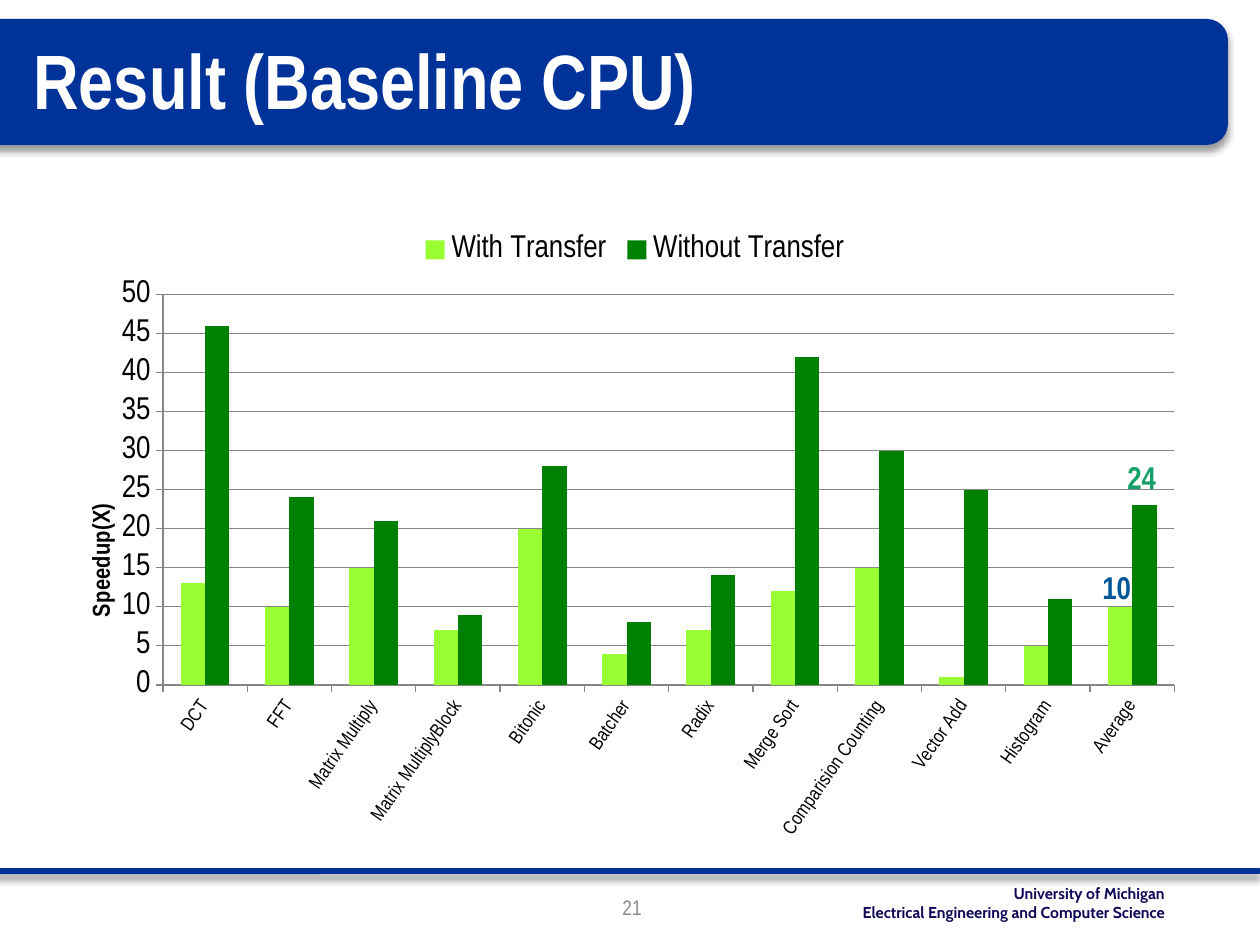
from dataclasses import dataclass

import pptx
import pptx.chart.data
import pptx.dml.color
import pptx.enum.chart
import pptx.enum.shapes
import pptx.enum.text
import pptx.oxml
import pptx.oxml.ns
import pptx.util

PX = 914400 / 126
FONT = "Arial Narrow"
NAVY, GRID = "003399", "868686"
ALIGN = pptx.enum.text.PP_ALIGN
ANCHOR = pptx.enum.text.MSO_ANCHOR

SPEEDUPS = [
    ("DCT", 13, 46), ("FFT", 10, 24), ("Matrix Multiply", 15, 21),
    ("Matrix MultiplyBlock", 7, 9), ("Bitonic", 20, 28), ("Batcher", 4, 8),
    ("Radix", 7, 14), ("Merge Sort", 12, 42), ("Comparision Counting", 15, 30),
    ("Vector Add", 1, 25), ("Histogram", 5, 11), ("Average", 10, 23),
]
SERIES = [("With Transfer", "99FF33"), ("Without Transfer", "008000")]


@dataclass
class Box:
    x: int
    y: int
    w: int
    h: int

    def emu(self) -> list[int]:
        return [round(v * PX) for v in (self.x, self.y, self.w, self.h)]


@dataclass
class Label:
    box: Box
    lines: list[str]
    size: int
    color: str
    bold: bool = True
    font: str = FONT
    align: ALIGN = ALIGN.LEFT
    anchor: ANCHOR = ANCHOR.TOP
    wrap: bool = True


BARS = [Box(-32, 19, 1260, 126), Box(-21, 868, 1281, 6)]
LABELS = [
    Label(Box(809, 878, 368, 50),
          ["University of Michigan", "Electrical Engineering and Computer Science"],
          9, "0F0958", font="Cabin", align=ALIGN.RIGHT),
    Label(Box(485, 882, 294, 50), ["21"], 12, "8C8C8C", bold=False,
          align=ALIGN.CENTER, anchor=ANCHOR.MIDDLE),
    Label(Box(21, 0, 1134, 158), ["Result (Baseline CPU)"], 44, "FFFFFF",
          anchor=ANCHOR.MIDDLE),
]
AVERAGES = [
    Label(Box(1090, 562, 54, 50), ["10"], 18, "005696", wrap=False),
    Label(Box(1115, 452, 54, 50), ["24"], 18, "14A067", wrap=False),
]


def rgb(color: str) -> pptx.dml.color.RGBColor:
    return pptx.dml.color.RGBColor.from_string(color)


def set_font(font, size: int, color: str, bold: bool = False, name: str = FONT) -> None:
    font.name, font.size, font.bold = name, pptx.util.Pt(size), bold
    font.color.rgb = rgb(color)


def add_bar(slide, box: Box) -> None:
    """Add a rounded navy bar with a soft shadow below it."""
    s = slide.shapes.add_shape(
        pptx.enum.shapes.MSO_SHAPE.ROUNDED_RECTANGLE, *box.emu())
    s.fill.solid()
    s.fill.fore_color.rgb = rgb(NAVY)
    s.line.fill.background()
    s.shadow.inherit = False
    effects = s._element.spPr.find(pptx.oxml.ns.qn("a:effectLst"))
    effects.append(pptx.oxml.parse_xml(
        f'<a:outerShdw {pptx.oxml.ns.nsdecls("a")} blurRad="50800" dist="38100" '
        'dir="5400000" algn="t" rotWithShape="0"><a:srgbClr val="000000">'
        '<a:alpha val="40000"/></a:srgbClr></a:outerShdw>'))


def add_label(slide, label: Label) -> None:
    tf = slide.shapes.add_textbox(*label.box.emu()).text_frame
    tf.word_wrap = label.wrap
    tf.vertical_anchor = label.anchor
    tf.text = "\n".join(label.lines)
    for p in tf.paragraphs:
        p.alignment = label.align
        set_font(p.font, label.size, label.color, label.bold, label.font)


def set_layout(parent, index: int, target: str = "", **places: float) -> None:
    """Place a chart part by fractions of the chart size."""
    for old in parent.xpath("c:layout"):
        parent.remove(old)
    inner = f'<c:layoutTarget val="{target}"/>' if target else ""
    inner += "".join(f'<c:{k}Mode val="edge"/>' for k in ("x", "y"))
    inner += "".join(f'<c:{k} val="{v}"/>' for k, v in places.items())
    parent.insert(index, pptx.oxml.parse_xml(
        f'<c:layout {pptx.oxml.ns.nsdecls("c")}><c:manualLayout>{inner}'
        '</c:manualLayout></c:layout>'))


def add_speedup_chart(slide, box: Box) -> None:
    categories, *columns = zip(*SPEEDUPS)
    data = pptx.chart.data.CategoryChartData()
    data.categories = categories
    for (name, _), values in zip(SERIES, columns):
        data.add_series(name, values)
    chart = slide.shapes.add_chart(
        pptx.enum.chart.XL_CHART_TYPE.COLUMN_CLUSTERED, *box.emu(), data).chart
    set_font(chart.font, 18, "000000")
    chart.has_title = False
    chart.has_legend = True
    chart.legend.position = pptx.enum.chart.XL_LEGEND_POSITION.TOP
    chart.legend.include_in_layout = False

    plot = chart.plots[0]
    plot.gap_width, plot.overlap = 146, 0
    plot.vary_by_categories = False
    for series, (_, color) in zip(plot.series, SERIES):
        series.format.fill.solid()
        series.format.fill.fore_color.rgb = rgb(color)
    set_layout(chart._chartSpace.chart.plotArea, 0, "inner",
               x=0.08, y=0.12, w=0.9, h=0.63)

    cat_axis, val_axis = chart.category_axis, chart.value_axis
    for axis, size in ((cat_axis, 11), (val_axis, 18)):
        axis.major_tick_mark = pptx.enum.chart.XL_TICK_MARK.OUTSIDE
        axis.format.line.color.rgb = rgb(GRID)
        set_font(axis.tick_labels.font, size, "000000")
    cat_axis._element.xpath("c:txPr/a:bodyPr")[0].set("rot", str(-55 * 60000))

    val_axis.minimum_scale, val_axis.maximum_scale, val_axis.major_unit = 0, 50, 5
    val_axis.has_major_gridlines = True
    val_axis.major_gridlines.format.line.color.rgb = rgb(GRID)
    tf = val_axis.axis_title.text_frame
    tf.text = "Speedup(X)"
    set_font(tf.paragraphs[0].font, 14, "000000", bold=True)
    tf._txBody.bodyPr.set("rot", str(-90 * 60000))
    tf._txBody.bodyPr.set("vert", "horz")
    set_layout(val_axis.axis_title._element, 1, x=0.01, y=0.45)


def main() -> None:
    prs = pptx.Presentation()
    prs.slide_width, prs.slide_height = pptx.util.Inches(10), pptx.util.Inches(7.5)
    slide = prs.slides.add_slide(prs.slide_layouts[6])
    for bar in BARS:
        add_bar(slide, bar)
    for label in LABELS:
        add_label(slide, label)
    add_speedup_chart(slide, Box(73, 220, 1124, 620))
    for label in AVERAGES:
        add_label(slide, label)
    prs.save("out.pptx")


if __name__ == "__main__":
    main()
